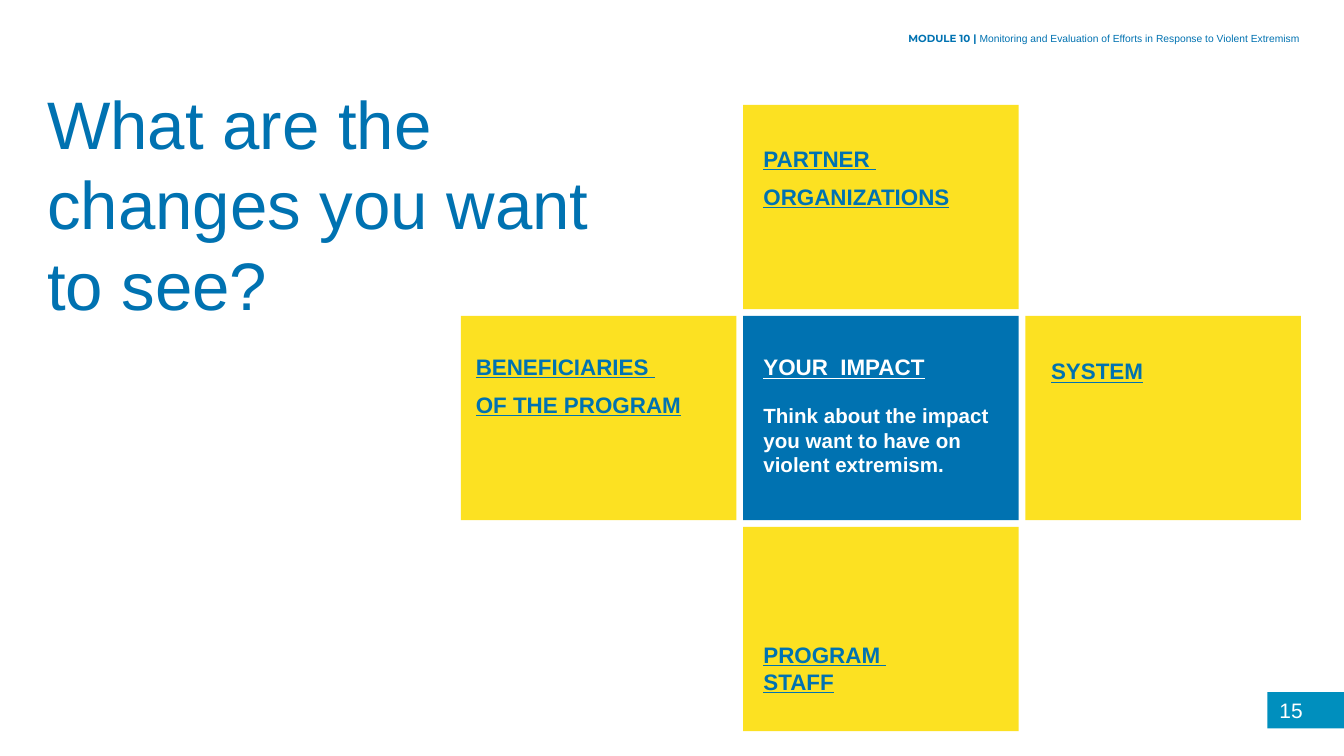
import copy
from dataclasses import dataclass

import pptx
import pptx.dml.color
import pptx.enum.shapes
import pptx.enum.text
import pptx.oxml.ns
import pptx.util

Inches = pptx.util.Inches
Pt = pptx.util.Pt
ALIGN = pptx.enum.text.PP_ALIGN
ANCHOR = pptx.enum.text.MSO_ANCHOR


@dataclass(frozen=True)
class Theme:
    blue: str = "0072B1"
    yellow: str = "FCE122"
    badge: str = "008FBE"
    white: str = "FFFFFF"
    font: str = "Arial"
    header_font: str = "Montserrat"
    title: float = 36
    label: float = 12
    body: float = 11
    number: float = 11.2
    header: float = 5.5


THEME = Theme()


def rgb(color):
    return pptx.dml.color.RGBColor.from_string(color)


def format_run(r, size, color, font=THEME.font, bold=False, underline=False):
    r.font.size = Pt(size)
    r.font.name = font
    r.font.bold = bold
    r.font.underline = underline
    r.font.color.rgb = rgb(color)


def write(tf, *lines, after=0, anchor=ANCHOR.BOTTOM, **style):
    tf.word_wrap = True
    tf.vertical_anchor = anchor
    tf.margin_left = tf.margin_right = tf.margin_top = tf.margin_bottom = 0
    for i, line in enumerate(lines):
        p = tf.paragraphs[0] if i == 0 else tf.add_paragraph()
        p.text = line
        p.alignment = ALIGN.LEFT
        p.line_spacing = 1.0
        p.space_before = Pt(0)
        p.space_after = Pt(after)
        for r in p.runs:
            format_run(r, **style)
        for br in p._p.findall(pptx.oxml.ns.qn("a:br")):
            br.append(copy.deepcopy(p.runs[0].font._element))


def add_text(slide, left, top, width, height, *lines, **style):
    sp = slide.shapes.add_textbox(Inches(left), Inches(top), Inches(width), Inches(height))
    write(sp.text_frame, *lines, **style)
    return sp


def add_block(slide, left, top, width, height, color):
    sp = slide.shapes.add_shape(
        pptx.enum.shapes.MSO_SHAPE.RECTANGLE,
        Inches(left), Inches(top), Inches(width), Inches(height))
    sp.shadow.inherit = False
    sp.fill.solid()
    sp.fill.fore_color.rgb = rgb(color)
    sp.line.fill.background()


def add_title(slide, text):
    sp = slide.shapes.title
    sp.left, sp.top, sp.width, sp.height = map(Inches, (0.35, 0.59, 4.15, 1.82))
    write(sp.text_frame, text, size=THEME.title, color=THEME.blue)
    sp.text_frame.auto_size = pptx.enum.text.MSO_AUTO_SIZE.NONE


def add_cross(slide):
    width, height, gap = 2.05, 1.52, 0.05
    for col, row in ((0, 0), (0, -1), (0, 1), (-1, 0), (1, 0)):
        color = THEME.yellow if col or row else THEME.blue
        add_block(slide, 5.53 + col * (width + gap), 2.35 + row * (height + gap),
                  width, height, color)


def add_labels(slide):
    labels = (
        (5.68, 1.07, 0.49, THEME.blue, ("PARTNER ", "ORGANIZATIONS")),
        (3.54, 2.62, 0.49, THEME.blue, ("BENEFICIARIES ", "OF THE PROGRAM")),
        (7.82, 2.66, 0.2, THEME.blue, ("SYSTEM",)),
        (5.68, 4.77, 0.4, THEME.blue, ("PROGRAM \vSTAFF",)),
        (5.68, 2.63, 0.2, THEME.white, ("YOUR  IMPACT",)),
    )
    for left, top, height, color, lines in labels:
        add_text(slide, left, top, 1.75, height, *lines, after=6,
                 size=THEME.label, color=color, bold=True, underline=True)
    add_text(slide, 5.68, 2.99, 1.75, 0.56,
             "Think about the impact you want to have on violent extremism.",
             after=6, size=THEME.body, color=THEME.white, bold=True)


def add_header(slide):
    sp = add_text(slide, 6.39, 0.19, 3.38, 0.23, "MODULE 10 | ",
                  anchor=ANCHOR.TOP, size=THEME.header, color=THEME.blue,
                  font=THEME.header_font, bold=True)
    tf = sp.text_frame
    tf.margin_left = tf.margin_right = Inches(0.1)
    tf.margin_top = tf.margin_bottom = Inches(0.05)
    p = tf.paragraphs[0]
    p.alignment = ALIGN.RIGHT
    r = p.add_run()
    r.text = "Monitoring and Evaluation of Efforts in Response to Violent Extremism"
    format_run(r, THEME.header, THEME.blue)


def add_page_number(slide):
    add_block(slide, 9.43, 5.15, 0.57, 0.27, THEME.badge)
    add_text(slide, 9.52, 5.19, 0.48, 0.19, "15", size=THEME.number, color=THEME.white)


def main():
    prs = pptx.Presentation()
    prs.slide_width = Inches(10)
    prs.slide_height = Inches(10) * 9 // 16
    slide = prs.slides.add_slide(prs.slide_layouts[5])
    add_page_number(slide)
    add_title(slide, "What are the changes you want to see?")
    add_cross(slide)
    add_labels(slide)
    add_header(slide)
    prs.save("out.pptx")


if __name__ == "__main__":
    main()
